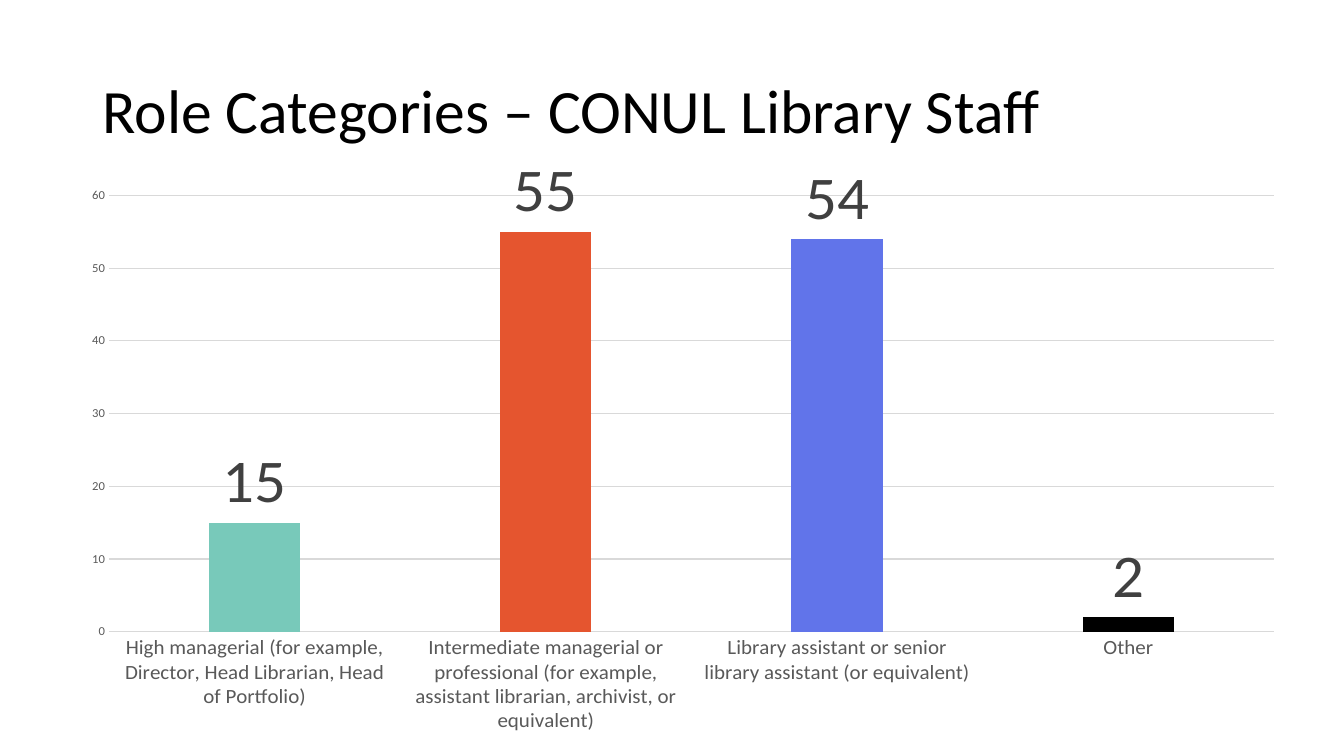
from pptx import Presentation
from pptx.chart.data import CategoryChartData
from pptx.dml.color import RGBColor
from pptx.enum.chart import XL_CHART_TYPE, XL_LABEL_POSITION, XL_TICK_MARK
from pptx.enum.text import MSO_ANCHOR
from pptx.util import Inches, Pt

COLUMNS = XL_CHART_TYPE.COLUMN_CLUSTERED
OUTSIDE_END = XL_LABEL_POSITION.OUTSIDE_END
NO_TICK = XL_TICK_MARK.NONE
MIDDLE = MSO_ANCHOR.MIDDLE

FONT = "Calibri"
COLORS = {
    "title": "000000",
    "axis_text": "595959",
    "label": "404040",
    "grid": "D9D9D9",
    "series": "4472C4",
}
ROLES = [
    ("High managerial (for example, Director, Head Librarian, Head of Portfolio)", 15, "78C9BA"),
    ("Intermediate managerial or professional (for example, assistant librarian, "
     "archivist, or equivalent)", 55, "E5552F"),
    ("Library assistant or senior library assistant (or equivalent)", 54, "6174EA"),
    ("Other", 2, "000000"),
]


def set_font(font, size, color):
    font.name = FONT
    font.size = Pt(size)
    font.color.rgb = RGBColor.from_string(COLORS[color])


def set_line(line, color):
    line.color.rgb = RGBColor.from_string(COLORS[color])
    line.width = Pt(0.75)


deck = Presentation()
deck.slide_width = Inches(13.33)
deck.slide_height = Inches(7.5)
page = deck.slides.add_slide(deck.slide_layouts[6])

# Title
title_box = page.shapes.add_textbox(Inches(0.92), Inches(0.4), Inches(11.5), Inches(1.45))
title_frame = title_box.text_frame
title_frame.word_wrap = True
title_frame.vertical_anchor = MIDDLE
title_para = title_frame.paragraphs[0]
title_para.text = "Role Categories – CONUL Library Staff"
title_para.line_spacing = 0.9
set_font(title_para.font, 44, "title")

# Column chart
role_data = CategoryChartData()
role_data.categories = [name for name, count, color in ROLES]
role_data.add_series("Series 1", [count for name, count, color in ROLES])
chart = page.shapes.add_chart(
    COLUMNS, Inches(0.67), Inches(1.53), Inches(12.21), Inches(5.85), role_data
).chart
chart.has_title = False
chart.has_legend = False
set_font(chart.font, 10, "title")

# Axes
role_axis = chart.category_axis
count_axis = chart.value_axis
for axis, size in ((role_axis, 15), (count_axis, 9)):
    axis.major_tick_mark = NO_TICK
    axis.minor_tick_mark = NO_TICK
    set_font(axis.tick_labels.font, size, "axis_text")
set_line(role_axis.format.line, "grid")
count_axis.minimum_scale = 0
count_axis.maximum_scale = 60
count_axis.major_unit = 10
count_axis.format.line.fill.background()
set_line(count_axis.major_gridlines.format.line, "grid")

# Bars and their values
plot = chart.plots[0]
plot.gap_width = 219
plot.overlap = -27
plot.vary_by_categories = False
staff = plot.series[0]
staff.invert_if_negative = False
staff.format.fill.solid()
staff.format.fill.fore_color.rgb = RGBColor.from_string(COLORS["series"])
for index, (name, count, color) in enumerate(ROLES):
    bar_fill = staff.points[index].format.fill
    bar_fill.solid()
    bar_fill.fore_color.rgb = RGBColor.from_string(color)

labels = staff.data_labels
labels.show_value = True
labels.position = OUTSIDE_END
set_font(labels.font, 45, "label")

deck.save("out.pptx")
